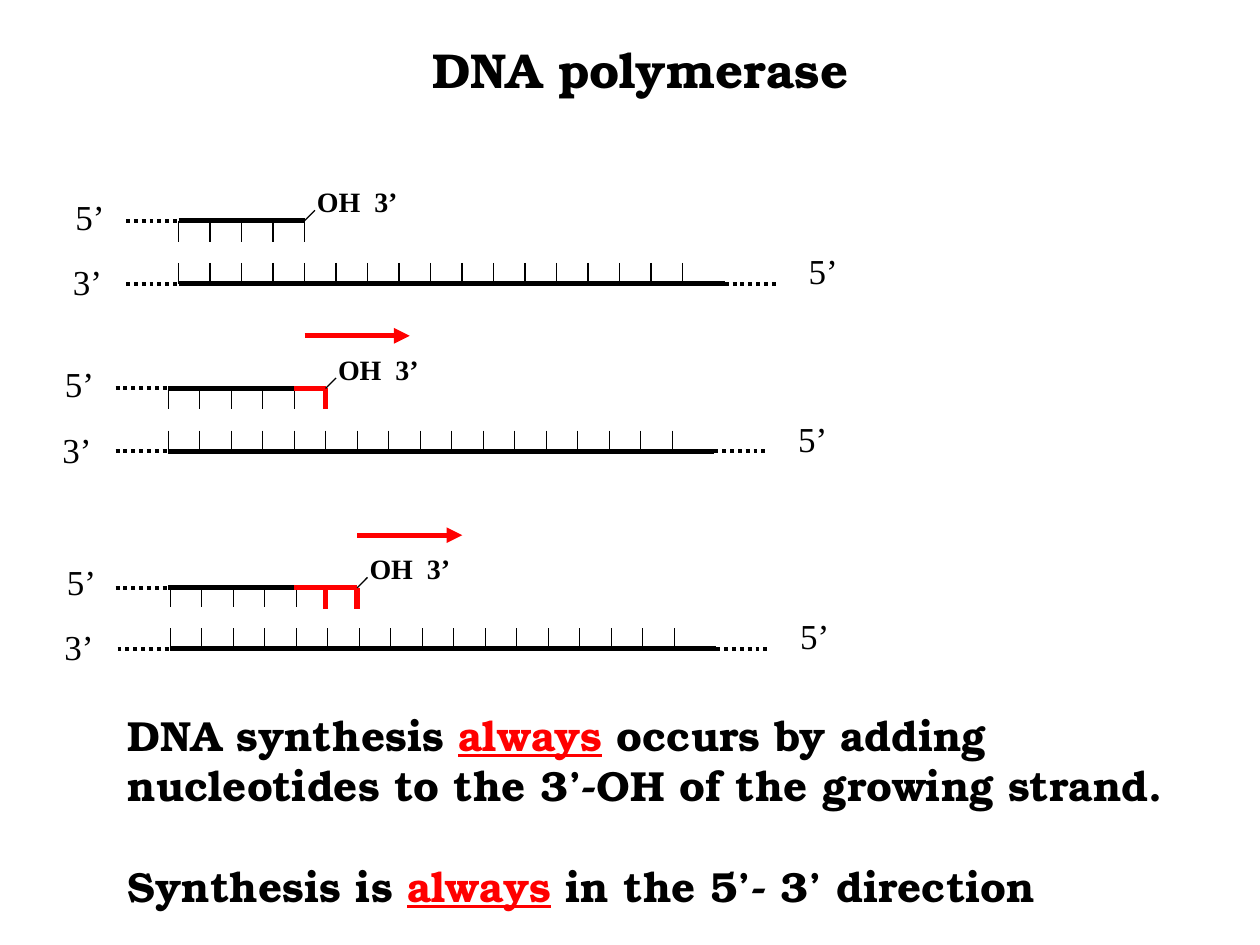
from dataclasses import dataclass

from lxml import etree
from pptx import Presentation
from pptx.dml.color import RGBColor
from pptx.enum.dml import MSO_LINE
from pptx.enum.shapes import MSO_CONNECTOR
from pptx.enum.text import MSO_AUTO_SIZE
from pptx.oxml.ns import qn
from pptx.util import Cm, Pt

STRAIGHT = MSO_CONNECTOR.STRAIGHT
DOTTED = MSO_LINE.ROUND_DOT
FIT_SHAPE = MSO_AUTO_SIZE.SHAPE_TO_FIT_TEXT

BLACK = RGBColor(0x00, 0x00, 0x00)
RED = RGBColor(0xFF, 0x00, 0x00)
LABEL_FONT = "Times New Roman"
HEADING_FONT = "TeX Gyre Bonum"

# Line widths in points
THIN, DOTS, THICK = 0.75, 2.25, 3

# Strand geometry in centimetres
TEMPLATE_BASES = 17
PRIMER_BASES = 5
PITCH = 10.16 / (TEMPLATE_BASES - 1)
BASE_LENGTH = 0.42
STRAND_GAP = 1.27
TEMPLATE_LENGTH = 11.01
PRIMER_LENGTH = (PRIMER_BASES - 1) * PITCH
DOTS_LENGTH = 1.06
BOND_SIZE = 0.21
ARROW_LENGTH = 2.12
ARROW_RISE = 1.06


@dataclass
class Stage:
    left: float
    template_top: float
    primer_left: float
    primer_top: float
    added_bases: int = 0
    arrow_left: float = 0


STAGES = [
    Stage(3.60, 5.72, 3.60, 4.45),
    Stage(3.39, 9.10, 3.39, 7.83, added_bases=1, arrow_left=6.14),
    Stage(3.43, 13.08, 3.39, 11.85, added_bases=2, arrow_left=7.20),
]


def add_line(slide, start, end, width, color=BLACK, dash=None, arrow=False):
    points = [Cm(value) for value in (*start, *end)]
    line = slide.shapes.add_connector(STRAIGHT, *points)
    line.line.color.rgb = color
    line.line.width = Pt(width)
    if dash is not None:
        line.line.dash_style = dash
    if arrow:
        etree.SubElement(line.line._get_or_add_ln(), qn("a:tailEnd"), type="triangle")
    etree.SubElement(line._element.spPr, qn("a:effectLst"))


def add_horizontal(slide, left, top, length, width, **style):
    add_line(slide, (left, top), (left + length, top), width, **style)


def add_bases(slide, left, top, count, width=THIN, color=BLACK):
    for index in range(count):
        x = left + index * PITCH
        add_line(slide, (x, top), (x, top + BASE_LENGTH), width, color)


def add_text(slide, box, paragraphs, size, font, bold=False, gap_before_last=0):
    """Each paragraph is a list of (text, emphasized) runs."""
    shape = slide.shapes.add_textbox(*(Cm(value) for value in box))
    frame = shape.text_frame
    frame.word_wrap = False
    frame.auto_size = FIT_SHAPE
    for index, runs in enumerate(paragraphs):
        paragraph = frame.add_paragraph() if index else frame.paragraphs[0]
        for text, emphasized in runs:
            run = paragraph.add_run()
            run.text = text
            run.font.name = font
            run.font.size = Pt(size)
            run.font.bold = bold
            run.font.underline = emphasized
            run.font.color.rgb = RED if emphasized else BLACK
    if gap_before_last:
        paragraph.space_before = Pt(gap_before_last)


def add_end_label(slide, left, top, text):
    add_text(slide, (left, top, 1.09, 1.09), [[(text, False)]], 20, LABEL_FONT)


def add_template(slide, stage):
    left, top = stage.left, stage.template_top
    add_horizontal(slide, left, top, TEMPLATE_LENGTH, THICK)
    add_bases(slide, left, top - BASE_LENGTH, TEMPLATE_BASES)
    for dots_left in (left - DOTS_LENGTH, left + TEMPLATE_LENGTH):
        add_horizontal(slide, dots_left, top, DOTS_LENGTH, DOTS, dash=DOTTED)
    add_end_label(slide, left + 12.45, top - 0.81, "5’")
    add_end_label(slide, left - 2.38, top - 0.59, "3’")


def add_primer(slide, stage):
    left, top = stage.primer_left, stage.primer_top
    base_top = stage.template_top - STRAND_GAP
    add_horizontal(slide, left, top, PRIMER_LENGTH, THICK)
    add_bases(slide, stage.left, base_top, PRIMER_BASES)
    add_horizontal(slide, left - DOTS_LENGTH, top, DOTS_LENGTH, DOTS, dash=DOTTED)
    add_end_label(slide, stage.left - 2.33, base_top - 0.64, "5’")

    # Newly added nucleotides and direction of growth
    growth_left = left + PRIMER_LENGTH
    growth = stage.added_bases * PITCH
    if stage.added_bases:
        add_horizontal(slide, growth_left, top, growth, THICK, color=RED)
        add_bases(slide, growth_left + PITCH, top, stage.added_bases, THICK, RED)
        add_horizontal(slide, stage.arrow_left, top - ARROW_RISE, ARROW_LENGTH,
                       THICK, color=RED, arrow=True)

    # Free hydroxyl end
    end = growth_left + growth
    add_line(slide, (end, top), (end + BOND_SIZE, top - BOND_SIZE), THIN)
    add_text(slide, (end, top - 0.85, 2.13, 0.94), [[("OH  3’", False)]],
             16, LABEL_FONT, bold=True)


def main():
    presentation = Presentation()
    presentation.slide_width = Cm(25.4)
    presentation.slide_height = Cm(19.05)
    slide = presentation.slides.add_slide(presentation.slide_layouts[6])

    # Title
    add_text(slide, (8.46, 0.67, 8.92, 1.45), [[("DNA polymerase", False)]],
             28, HEADING_FONT, bold=True)

    # Stages of strand growth
    for stage in STAGES:
        add_template(slide, stage)
        add_primer(slide, stage)

    # Conclusion
    conclusion = [
        [("DNA synthesis ", False), ("always", True), (" occurs by adding", False)],
        [("nucleotides to the 3’-OH of the growing strand.", False)],
        [("Synthesis is ", False), ("always", True),
         (" in the 5’- 3’ direction", False)],
    ]
    add_text(slide, (2.33, 14.18, 21.5, 4.32), conclusion, 24, HEADING_FONT,
             bold=True, gap_before_last=28.8)

    presentation.save("out.pptx")


if __name__ == "__main__":
    main()
